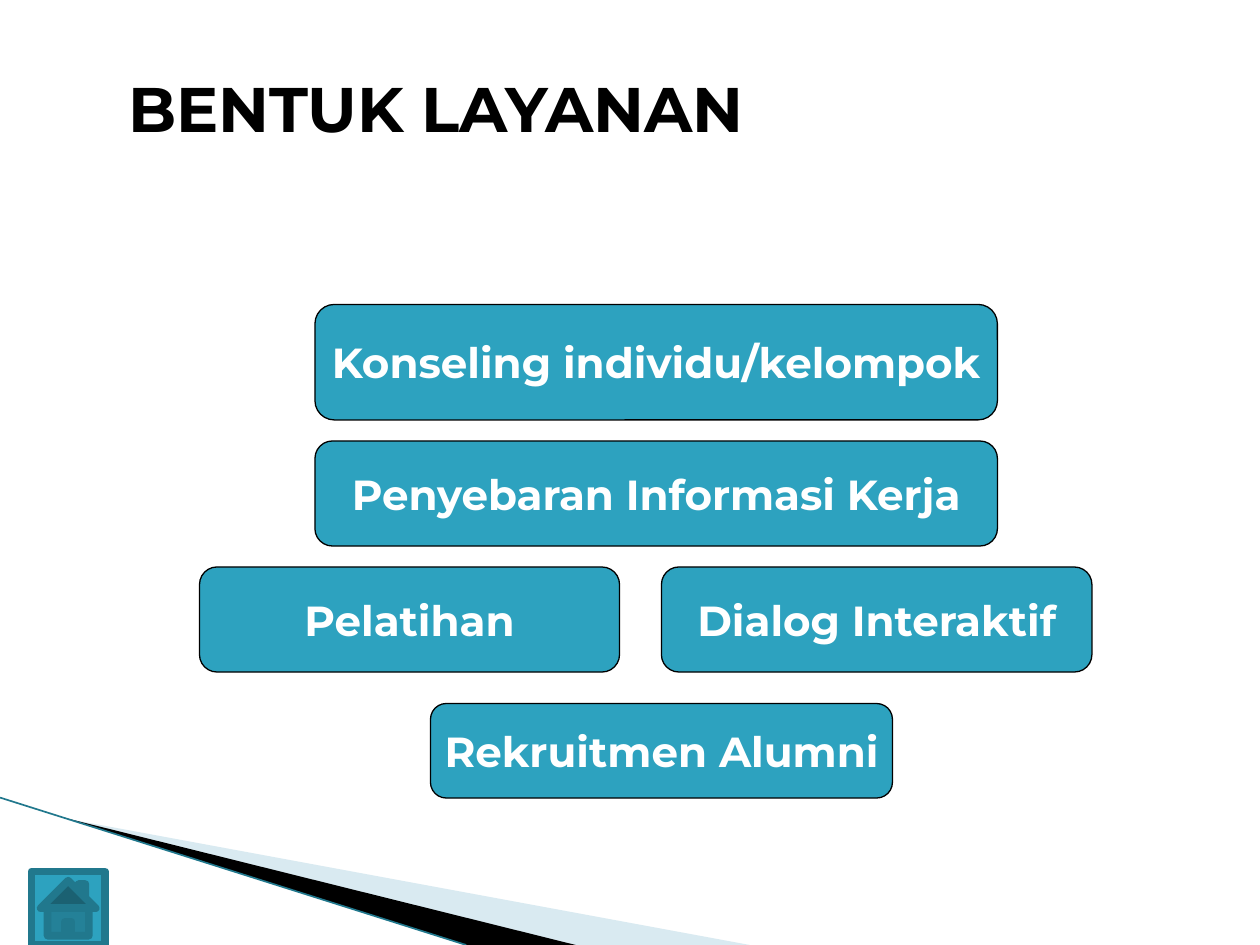
from lxml import etree
from pptx import Presentation
from pptx import util as u
from pptx.dml.color import RGBColor
from pptx.enum import shapes, text
from pptx.oxml import ns

COLORS = {"box": "2DA2BF", "edge": "21788D", "mist": "A0CBDC",
          "ink": "000000", "paper": "FFFFFF"}
COLUMNS, ROWS = 120, 90
SERVICES = [
    ("Konseling individu/kelompok", (30, 29, 65, 11)),
    ("Penyebaran Informasi Kerja", (30, 42, 65, 10)),
    ("Pelatihan", (19, 54, 40, 10)),
    ("Dialog Interaktif", (63, 54, 41, 10)),
    ("Rekruitmen Alumni", (41, 67, 44, 9)),
]
MIST_WEDGE = [(0.055, 0.867), (0.595, 1), (0.456, 1)]
INK_WEDGE = [(0.053, 0.866), (0.457, 1), (0.37, 1)]


def rgb(name):
    return RGBColor.from_string(COLORS[name])


def grid(prs, box):
    cell_w, cell_h = prs.slide_width / COLUMNS, prs.slide_height / ROWS
    return [round(n * size) for n, size in zip(box, (cell_w, cell_h) * 2)]


def apply(target, values):
    for name, value in values.items():
        setattr(target, name, value)


def paint(shape, fill, edge=None, width=0.75):
    shape.shadow.inherit = False
    shape.fill.solid()
    shape.fill.fore_color.rgb = rgb(fill)
    if edge:
        shape.line.color.rgb = rgb(edge)
        shape.line.width = u.Pt(width)
    else:
        shape.line.fill.background()


def write(shape, words, size, color, align, anchor):
    frame = shape.text_frame
    frame.text = words
    apply(frame, {"word_wrap": False, "vertical_anchor": anchor,
                  "auto_size": text.MSO_AUTO_SIZE.NONE})
    frame.paragraphs[0].alignment = align
    font = frame.paragraphs[0].runs[0].font
    apply(font, {"name": "Montserrat", "size": u.Pt(size), "bold": True})
    font.color.rgb = rgb(color)


def add_wedge(slide, box, shares, fill):
    left, top, width, height = box
    points = [(left + x * width, top + y * height) for x, y in shares]
    builder = slide.shapes.build_freeform(*points[0])
    builder.add_line_segments(points[1:])
    wedge = builder.convert_to_shape()
    paint(wedge, fill)
    return wedge


def add_corner(slide, box):
    mist = add_wedge(slide, box, MIST_WEDGE, "mist")
    tint = mist.fill._xPr.find(".//" + ns.qn("a:srgbClr"))
    etree.SubElement(tint, ns.qn("a:alpha"), val="40000")
    add_wedge(slide, box, INK_WEDGE, "ink")
    left, top, width, height = box
    rim = slide.shapes.add_connector(
        shapes.MSO_CONNECTOR.STRAIGHT, left, top + round(0.844 * height),
        left + round(0.37 * width), top + height)
    rim.line.color.rgb = rgb("edge")
    rim.line.width = u.Pt(0.95)
    etree.SubElement(rim._element.spPr, ns.qn("a:effectLst"))


def add_title(slide, box):
    title = slide.shapes.title
    apply(title, dict(zip(("left", "top", "width", "height"), box)))
    write(title, "BENTUK LAYANAN", 36, "ink",
          text.PP_ALIGN.LEFT, text.MSO_ANCHOR.TOP)


def add_service(slide, words, box):
    service = slide.shapes.add_shape(
        shapes.MSO_SHAPE.ROUNDED_RECTANGLE, *box)
    paint(service, "box", "ink")
    write(service, words, 24, "paper",
          text.PP_ALIGN.CENTER, text.MSO_ANCHOR.MIDDLE)


def add_home(slide, box):
    home = slide.shapes.add_shape(shapes.MSO_SHAPE.ACTION_BUTTON_HOME, *box)
    paint(home, "box", "edge", 4.33)


def main():
    prs = Presentation()
    apply(prs, {"slide_width": u.Inches(10), "slide_height": u.Inches(7.5)})
    slide = prs.slides.add_slide(prs.slide_layouts.get_by_name("Title Only"))
    add_corner(slide, grid(prs, (0, 0, COLUMNS, ROWS)))
    add_title(slide, grid(prs, (11, 6, 78, 8.5)))
    for words, box in SERVICES:
        add_service(slide, words, grid(prs, box))
    add_home(slide, grid(prs, (3, 83, 7, 7)))
    prs.save("out.pptx")


if __name__ == "__main__":
    main()
